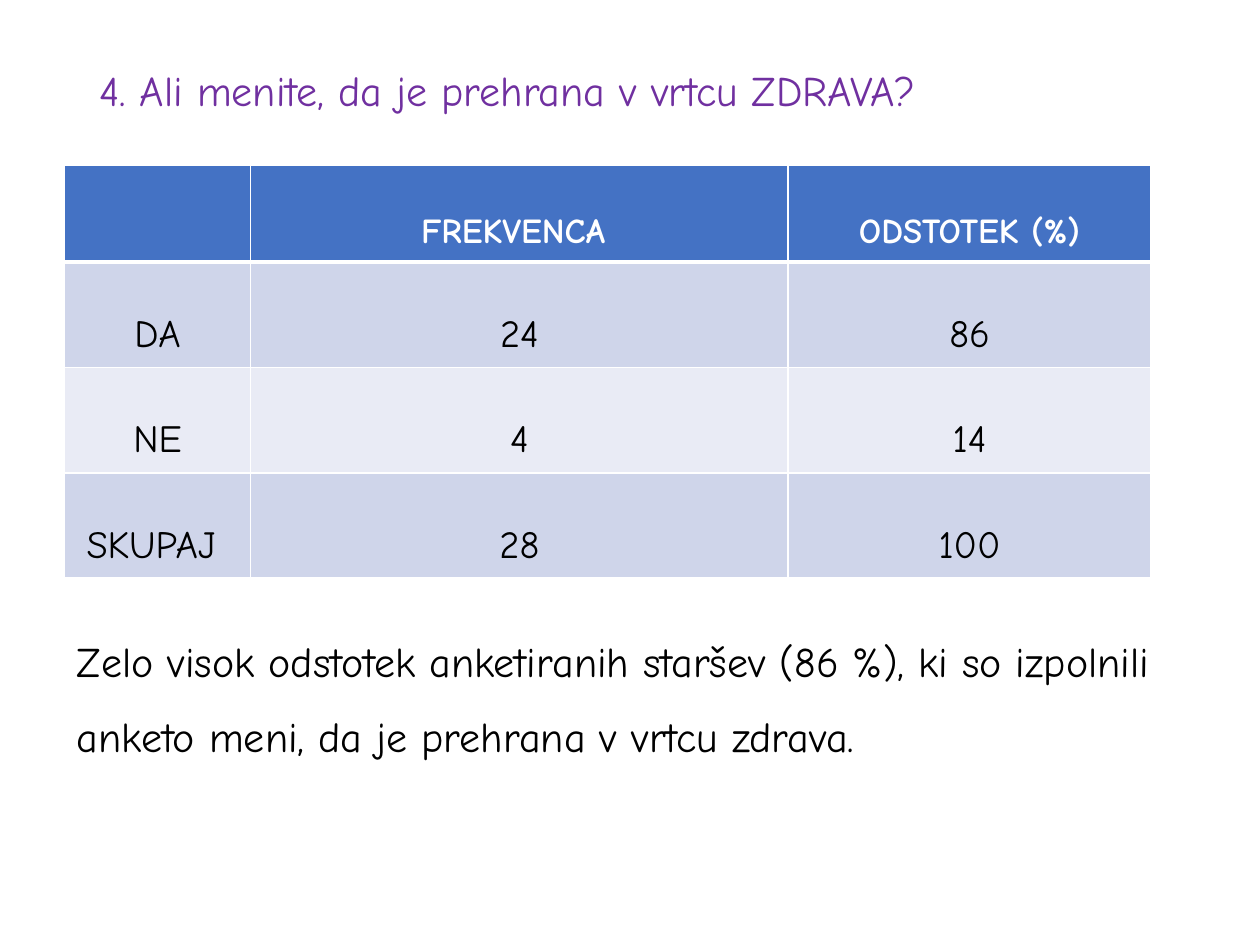
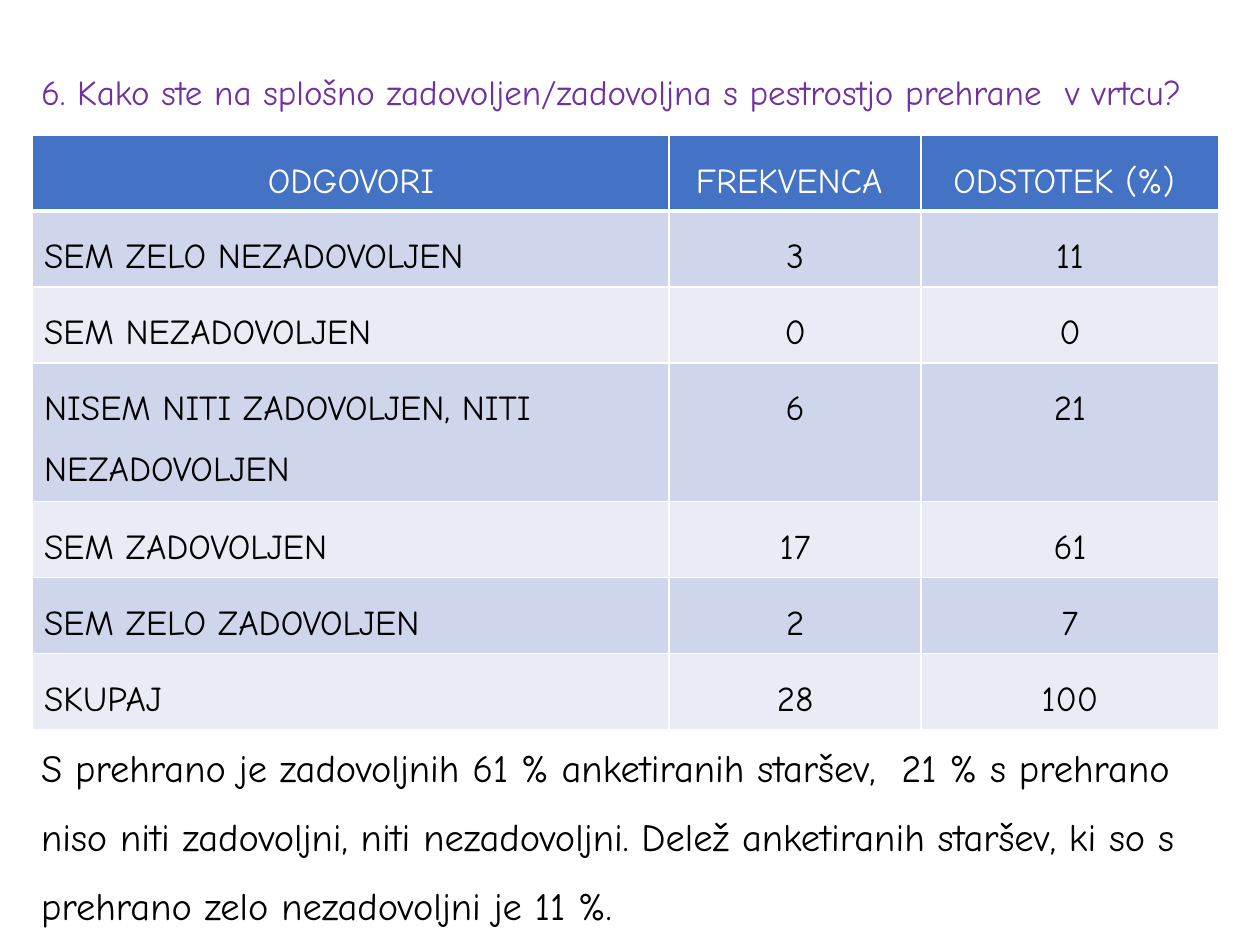
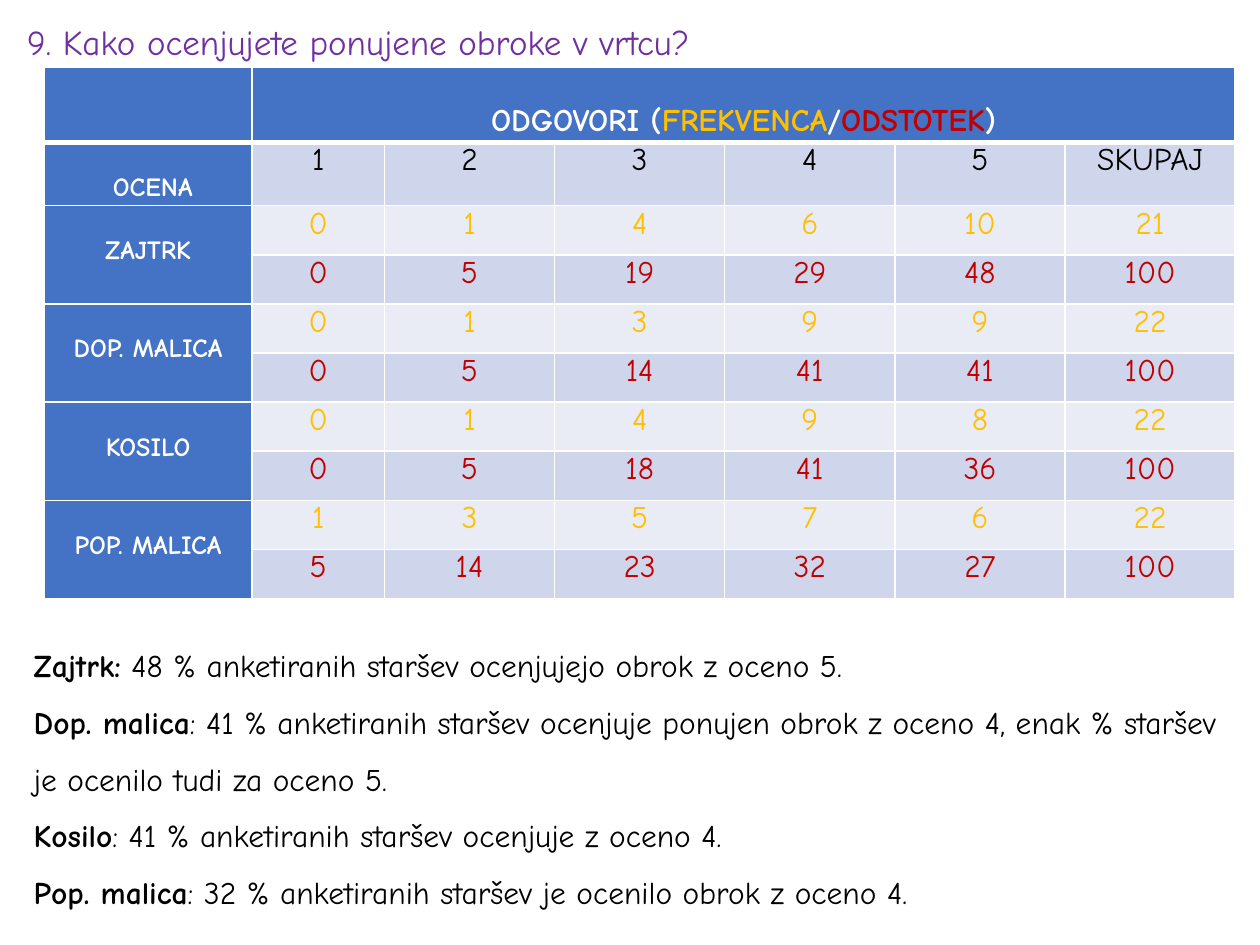
from dataclasses import dataclass, field
from typing import Any, NamedTuple

from lxml.etree import Element, SubElement
from pptx import Presentation
from pptx.dml.color import RGBColor
from pptx.enum.text import MSO_ANCHOR as Anchor, MSO_AUTO_SIZE as Fit, PP_ALIGN as Align
from pptx.oxml.ns import qn
from pptx.util import Cm, Pt

FACE = "Comic Neue"
PURPLE, BLACK, WHITE = "7030A0", "000000", "FFFFFF"
BLUE, GOLD, RED = "4472C4", "FFC000", "C00000"
BANDS = "CFD5EA", "E9EBF5"
THIN, THICK = 1, 3


class Run(NamedTuple):
    text: str
    color: str = BLACK
    bold: bool = False


class Cell(NamedTuple):
    runs: list[Run]
    size: int = 18
    fill: str = BLUE
    form: dict[str, Any] = {}
    span: tuple[int, int] = (1, 1)


@dataclass
class Box:
    place: tuple[float, float, float, float]
    lines: list[list[Run]]
    size: int
    space: float = 1.5
    look: dict[str, Any] = field(default_factory=dict)


@dataclass
class Grid:
    place: tuple[float, float]
    tall: float
    cols: list[float]
    rows: list[float]
    cells: list[list[Cell | None]]
    inset: tuple[float, float] = (0.23, 0.13)


@dataclass
class Page:
    title: Box
    grid: Grid
    body: Box


def paint(code: str) -> RGBColor:
    return RGBColor.from_string(code)


def apply(item: Any, form: dict[str, Any]) -> None:
    for name, value in form.items():
        setattr(item, name, value)


def write(frame: Any, lines: list[list[Run]], size: int, form: dict[str, Any]) -> None:
    for i, line in enumerate(lines):
        para = frame.add_paragraph() if i else frame.paragraphs[0]
        apply(para, form)
        for part in line:
            run = para.add_run()
            run.text = part.text
            apply(run.font, {"name": FACE, "size": Pt(size), "bold": part.bold})
            run.font.color.rgb = paint(part.color)


def draw_box(slide: Any, box: Box) -> None:
    frame = slide.shapes.add_textbox(*map(Cm, box.place)).text_frame
    apply(frame, {"word_wrap": True, **box.look})
    write(frame, box.lines, box.size, {"line_spacing": box.space})


def edge(cell: Any, row: int) -> None:
    """Rule a cell in white, with a thick line under the header row."""
    wide = {"T": THICK if row == 1 else THIN, "B": THICK if row == 0 else THIN}
    for i, side in enumerate("LRTB"):
        line = Element(qn(f"a:ln{side}"), w=str(Pt(wide.get(side, THIN))))
        solid = SubElement(line, qn("a:solidFill"))
        SubElement(solid, qn("a:srgbClr"), val=WHITE)
        cell._tc.get_or_add_tcPr().insert(i, line)


def draw_grid(slide: Any, grid: Grid) -> None:
    size = sum(grid.cols), grid.tall
    shape = slide.shapes.add_table(
        len(grid.rows), len(grid.cols), *map(Cm, grid.place + size))
    table = shape.table
    for col, width in zip(table.columns, grid.cols):
        col.width = Cm(width)
    for row, height in zip(table.rows, grid.rows):
        row.height = Cm(height)
    shape.height = Cm(grid.tall)
    side, top = map(Cm, grid.inset)
    for r, row in enumerate(grid.cells):
        for c, data in enumerate(row):
            cell = table.cell(r, c)
            apply(cell, {"margin_left": side, "margin_right": side,
                         "margin_top": top, "margin_bottom": top})
            cell.fill.solid()
            cell.fill.fore_color.rgb = paint(data.fill if data else BLUE)
            edge(cell, r)
            if data is None:
                continue
            write(cell.text_frame, [data.runs], data.size, data.form)
            down, over = data.span
            if down * over > 1:
                cell.merge(table.cell(r + down - 1, c + over - 1))


def title(place: tuple[float, float, float, float], text: str, size: int,
          space: float = 0.9) -> Box:
    return Box(place, [[Run(text, PURPLE)]], size, space,
               {"vertical_anchor": Anchor.MIDDLE})


def body(place: tuple[float, float, float, float], lines: list[list[Run]],
         size: int) -> Box:
    return Box(place, lines, size, look={"auto_size": Fit.SHAPE_TO_FIT_TEXT})


def band(row: int) -> str:
    return BANDS[(row - 1) % 2]


WIDE = {"alignment": Align.CENTER, "line_spacing": 2.0}
LEFT = {"line_spacing": 1.5, "space_after": Pt(8)}
MID = {**LEFT, "alignment": Align.CENTER}
TIGHT = {"alignment": Align.CENTER, "space_after": Pt(8)}
LABEL = {**TIGHT, "line_spacing": 2.0}


def health() -> list[list[Cell | None]]:
    heads = ["FREKVENCA ", "ODSTOTEK (%)"]
    rows = [("DA", 24, 86), ("NE", 4, 14), ("SKUPAJ ", 28, 100)]
    top = [Cell([Run(text, WHITE, True)], 20, BLUE, WIDE) for text in heads]
    return [[None, *top]] + [
        [Cell([Run(str(item))], 22, band(r), WIDE) for item in row]
        for r, row in enumerate(rows, 1)]


def range_of() -> list[list[Cell | None]]:
    """Cells on how happy parents are with the variety of food."""
    heads = ["ODGOVORI", "FREKVENCA ", "ODSTOTEK (%) "]
    rows = [
        ("SEM ZELO NEZADOVOLJEN", 3, 11),
        ("SEM NEZADOVOLJEN", 0, 0),
        ("NISEM NITI ZADOVOLJEN, NITI NEZADOVOLJEN", 6, 21),
        ("SEM ZADOVOLJEN", 17, 61),
        ("SEM ZELO ZADOVOLJEN", 2, 7),
        ("SKUPAJ", 28, 100),
    ]
    top = [Cell([Run(text, WHITE)], 20, BLUE, MID) for text in heads]
    return [top] + [
        [Cell([Run(str(item))], 20, band(r), MID if c else LEFT)
         for c, item in enumerate(row)]
        for r, row in enumerate(rows, 1)]


def meals() -> list[list[Cell | None]]:
    def label(text: str, down: int = 1) -> Cell:
        return Cell([Run(text, WHITE, True)], 15, BLUE, LABEL, (down, 1))

    def line(row: int, items: list[Any], color: str) -> list[Cell]:
        return [Cell([Run(str(item), color)], 18, band(row), TIGHT) for item in items]

    marks = {
        "ZAJTRK": ([0, 1, 4, 6, 10, 21], [0, 5, 19, 29, 48, 100]),
        "DOP. MALICA": ([0, 1, 3, 9, 9, 22], [0, 5, 14, 41, 41, 100]),
        "KOSILO": ([0, 1, 4, 9, 8, 22], [0, 5, 18, 41, 36, 100]),
        "POP. MALICA": ([1, 3, 5, 7, 6, 22], [5, 14, 23, 32, 27, 100]),
    }
    parts = [("ODGOVORI (", WHITE), ("FREKVENCA", GOLD), ("/", WHITE),
             ("ODSTOTEK", RED), (")", WHITE)]
    head = Cell([Run(text, color, True) for text, color in parts],
                18, BLUE, LABEL, (1, 6))
    cells = [[None, head] + [None] * 5,
             [label(" OCENA"), *line(1, [1, 2, 3, 4, 5, "SKUPAJ"], BLACK)]]
    for name, (counts, shares) in marks.items():
        cells.append([label(name, 2), *line(2, counts, GOLD)])
        cells.append([None, *line(3, shares, RED)])
    return cells


NOTES = [
    ("Zajtrk:", " 48 % anketiranih staršev ocenjujejo obrok z oceno 5."),
    ("Dop. malica", ": 41 % anketiranih staršev ocenjuje ponujen obrok z oceno 4, "
                    "enak % staršev je ocenilo tudi za oceno 5."),
    ("Kosilo", ": 41 % anketiranih staršev ocenjuje z oceno 4."),
    ("Pop. malica", ": 32 % anketiranih staršev je ocenilo obrok z oceno 4."),
]

PAGES = [
    Page(
        title((1.75, 1.02, 21.9, 1.7),
              "4. Ali menite, da je prehrana v vrtcu ZDRAVA?", 24),
        Grid((1.3, 3.33), 7.39, [3.75, 10.84, 7.31], [1.03] * 4, health()),
        body((1.3, 12.17, 22.4, 3.18),
             [[Run("Zelo visok odstotek anketiranih staršev (86 %), ki so izpolnili "
                   "anketo meni, da je prehrana v vrtcu zdrava.")]], 24),
    ),
    Page(
        title((0.58, 0.53, 24.51, 2.21),
              "6. Kako ste na splošno zadovoljen/zadovoljna s pestrostjo "
              "prehrane  v vrtcu?", 20, 1.5),
        Grid((0.66, 2.72), 10.77, [12.83, 5.08, 6],
             [1.24] * 3 + [2.39] + [1.24] * 3, range_of()),
        body((0.58, 14.4, 24.82, 4.34),
             [[Run("S prehrano je zadovoljnih 61 % anketiranih staršev,  21 % s "
                   "prehrano niso niti zadovoljni, niti nezadovoljni. Delež "
                   "anketiranih staršev, ki so s prehrano zelo nezadovoljni "
                   "je 11 %.")]], 22),
    ),
    Page(
        title((0.3, 0.33, 21.9, 1.12),
              "9. Kako ocenjujete ponujene obroke v vrtcu?", 20),
        Grid((0.89, 1.35), 10.34, [4.19, 2.67] + [3.43] * 5, [0.99] * 10,
             meals(), (0.18, 0)),
        body((0.43, 12.52, 24.97, 5.89),
             [[Run(meal, bold=True), Run(text)] for meal, text in NOTES], 18),
    ),
]


def main() -> None:
    deck = Presentation()
    apply(deck, {"slide_width": Cm(25.4), "slide_height": Cm(19.05)})
    for page in PAGES:
        slide = deck.slides.add_slide(deck.slide_layouts[6])
        draw_box(slide, page.title)
        draw_grid(slide, page.grid)
        draw_box(slide, page.body)
    deck.save("out.pptx")


if __name__ == "__main__":
    main()
